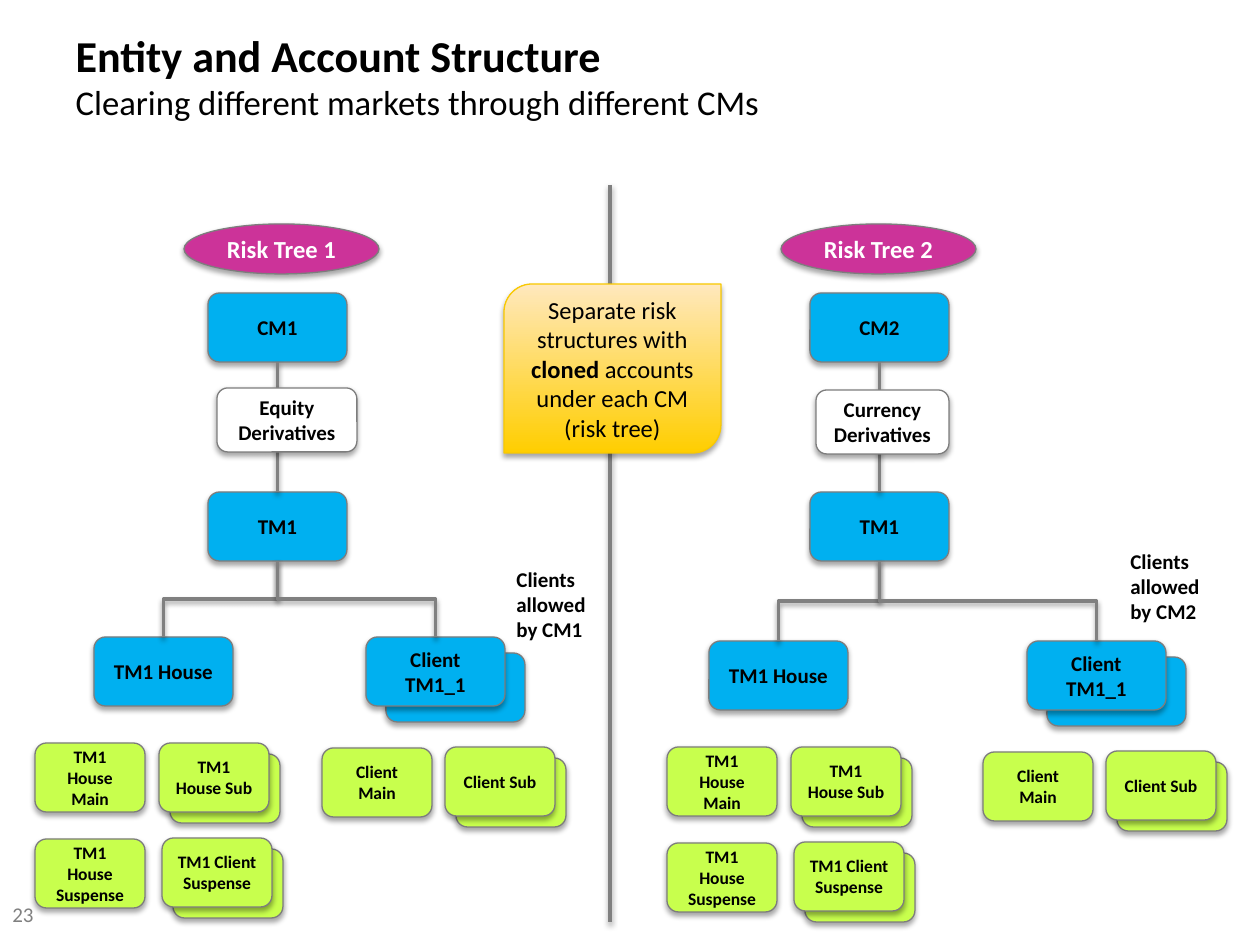
from lxml import etree
from pptx import Presentation
from pptx.dml.color import RGBColor
from pptx.enum.shapes import MSO_CONNECTOR, MSO_SHAPE
from pptx.enum.text import MSO_ANCHOR, MSO_AUTO_SIZE, PP_ALIGN
from pptx.oxml.ns import qn
from pptx.util import Pt

PX = 914400 // 126
ROUNDED, OVAL = MSO_SHAPE.ROUNDED_RECTANGLE, MSO_SHAPE.OVAL
NOTE_SHAPE = MSO_SHAPE.ROUND_2_DIAG_RECTANGLE
STRAIGHT, ELBOW = MSO_CONNECTOR.STRAIGHT, MSO_CONNECTOR.ELBOW
LEFT, CENTER = PP_ALIGN.LEFT, PP_ALIGN.CENTER
TOP, MIDDLE = MSO_ANCHOR.TOP, MSO_ANCHOR.MIDDLE
TOP_SIDE, BOTTOM_SIDE = 0, 2


class Theme:
    font = "Calibri"
    black, white, gray = "000000", "FFFFFF", "808080"
    outline, entity, account, risk = "7D7D7D", "00B0F0", "C8FF4D", "CC3399"
    note_bottom, note_top, note_line = "FFCE00", "FFE8BD", "F9C900"
    title, subtitle, heading, body, small = 25.2, 19.8, 14, 12, 10
    thin, thick = 0.75, 2


TITLE = [[("Entity and Account Structure", {"bold": True}), ("\n", {}),
          ("Clearing different markets through different CMs", {"size": Theme.subtitle})]]
NOTE = [[("Separate risk structures with ", {}), ("cloned", {"bold": True}),
         (" accounts under each CM (risk tree)", {})]]

ENTITY_SIZE, ACCOUNT_SIZE = (139, 69), (110, 69)
ENTITY_STACK, ACCOUNT_STACK = (20, 16), (11, 11)

# Accounts: text, left, top, stacked; places are those of the first tree
HOUSE_ACCOUNTS = [
    ("TM1 House Main", 35, 743, False),
    ("TM1 House Sub", 159, 743, True),
    ("TM1 House Suspense", 35, 839, False),
    ("TM1 Client Suspense", 162, 838, True),
]
CLIENT_ACCOUNTS = [
    ("Client Main", 322, 748, False),
    ("Client Sub", 445, 747, True),
]
# Shifts move each group of the first tree to its place in this tree
TREES = [
    {"name": "Risk Tree 1", "member": "CM1", "market": ["Equity Derivatives"],
     "market_box": (217, 388, 140, 64), "clients": "Clients allowed by CM1",
     "clients_box": (504, 560, 106, 90), "name_left": 184, "trunk_left": 208,
     "house_shift": (0, 0), "house_accounts_shift": (0, 0), "client_shift": (0, 0)},
    {"name": "Risk Tree 2", "member": "CM2", "market": ["Currency", "Derivatives"],
     "market_box": (816, 390, 133, 64), "clients": "Clients allowed by CM2",
     "clients_box": (1118, 542, 110, 90), "name_left": 781, "trunk_left": 810,
     "house_shift": (615, 4), "house_accounts_shift": (632, 4), "client_shift": (661, 4)},
]


def color(code):
    return RGBColor.from_string(code)


def emu(box):
    return [value * PX for value in box]


def write(shape, paragraphs, size=Theme.body, bold=False, ink=Theme.black,
          align=CENTER, anchor=MIDDLE):
    """Fill a shape; a paragraph is a string or a list of (text, overrides) runs."""
    frame = shape.text_frame
    frame.word_wrap = True
    frame.auto_size = MSO_AUTO_SIZE.NONE
    frame.vertical_anchor = anchor
    for index, content in enumerate(paragraphs):
        paragraph = frame.add_paragraph() if index else frame.paragraphs[0]
        paragraph.alignment = align
        runs = [(content, {})] if isinstance(content, str) else content
        for text, overrides in runs:
            if text == "\n":
                paragraph.add_line_break()
                continue
            run = paragraph.add_run()
            run.text = text
            run.font.name = Theme.font
            run.font.size = Pt(overrides.get("size", size))
            run.font.bold = overrides.get("bold", bold)
            run.font.color.rgb = color(ink)


def add_shadow(shape, opacity):
    properties = shape._element.spPr
    effects = properties.find(qn("a:effectLst"))
    if effects is None:
        effects = etree.SubElement(properties, qn("a:effectLst"))
    shadow = etree.SubElement(effects, qn("a:outerShdw"), blurRad="39400", dist="22900",
                              dir="5400000", rotWithShape="0")
    ink = etree.SubElement(shadow, qn("a:srgbClr"), val=Theme.black)
    etree.SubElement(ink, qn("a:alpha"), val=str(opacity * 1000))


def add_box(slide, kind, box, fill, line=Theme.outline):
    shape = slide.shapes.add_shape(kind, *emu(box))
    if isinstance(fill, tuple):
        shape.fill.gradient()
        shape.fill.gradient_angle = 90
        for stop, code in zip(shape.fill.gradient_stops, fill):
            stop.color.rgb = color(code)
    else:
        shape.fill.solid()
        shape.fill.fore_color.rgb = color(fill)
    shape.line.color.rgb = color(line)
    shape.line.width = Pt(Theme.thin)
    shape.shadow.inherit = False
    add_shadow(shape, 35)
    return shape


def add_label(slide, box, text, **style):
    write(slide.shapes.add_textbox(*emu(box)), [text], align=LEFT, anchor=TOP, **style)


def add_line(slide, kind, ends=(0, 0, 0, 0)):
    connector = slide.shapes.add_connector(kind, *emu(ends))
    connector.line.color.rgb = color(Theme.gray)
    connector.line.width = Pt(Theme.thick)
    add_shadow(connector, 38)
    return connector


def join(slide, kind, parent, child):
    connector = add_line(slide, kind)
    connector.begin_connect(parent, BOTTOM_SIDE)
    connector.end_connect(child, TOP_SIDE)
    return connector


def branch(slide, parent, child):
    """Join by an elbow that leaves downwards, which takes a quarter turn."""
    connector = join(slide, ELBOW, parent, child)
    start_x, end_x = connector.begin_x, connector.end_x
    start_y, end_y = connector.begin_y, connector.end_y
    across, down = abs(end_x - start_x), end_y - start_y
    transform = connector._element.spPr.find(qn("a:xfrm"))
    transform.attrib.clear()
    if end_x < start_x:
        transform.set("rot", "5400000")
    else:
        transform.set("rot", "16200000")
        transform.set("flipH", "1")
    connector.left = (start_x + end_x - down) // 2
    connector.top = (start_y + end_y - across) // 2
    connector.width, connector.height = down, across


def add_card(slide, text, left, top, size, fill, type_size, stack=None):
    if stack:
        add_box(slide, ROUNDED, (left + stack[0], top + stack[1], *size), fill)
    card = add_box(slide, ROUNDED, (left, top, *size), fill)
    write(card, [text], size=type_size, bold=True)
    return card


def add_entity(slide, text, left, top, stack=None):
    return add_card(slide, text, left, top, ENTITY_SIZE, Theme.entity, Theme.body, stack)


def add_accounts(slide, accounts, shift):
    for text, left, top, stacked in accounts:
        add_card(slide, text, left + shift[0], top + shift[1], ACCOUNT_SIZE, Theme.account,
                 Theme.small, ACCOUNT_STACK if stacked else None)


def add_tree(slide, tree):
    name = add_box(slide, OVAL, (tree["name_left"], 224, 195, 50), Theme.risk)
    write(name, [tree["name"]], size=Theme.heading, bold=True, ink=Theme.white)

    house_x, house_y = tree["house_shift"]
    client_x, client_y = tree["client_shift"]
    member = add_entity(slide, tree["member"], tree["trunk_left"], 293)
    trader = add_entity(slide, "TM1", tree["trunk_left"], 492)
    house = add_entity(slide, "TM1 House", 94 + house_x, 637 + house_y)
    client = add_entity(slide, "Client TM1_1", 366 + client_x, 637 + client_y, ENTITY_STACK)
    join(slide, STRAIGHT, member, trader)
    branch(slide, trader, house)
    branch(slide, trader, client)

    add_accounts(slide, HOUSE_ACCOUNTS, tree["house_accounts_shift"])
    add_accounts(slide, CLIENT_ACCOUNTS, tree["client_shift"])
    market = add_box(slide, ROUNDED, tree["market_box"], Theme.white)
    write(market, tree["market"], bold=True)
    add_label(slide, tree["clients_box"], tree["clients"], bold=True)


def main():
    presentation = Presentation()
    presentation.slide_width, presentation.slide_height = emu((1260, 945))
    slide = presentation.slides.add_slide(presentation.slide_layouts[5])

    title = slide.shapes.title
    title.left, title.top, title.width, title.height = emu((63, 25, 847, 101))
    write(title, TITLE, size=Theme.title, align=LEFT)
    add_label(slide, (0, 895, 74, 50), "23", ink=Theme.gray)

    for tree in TREES:
        add_tree(slide, tree)

    add_line(slide, STRAIGHT, (610, 185, 610, 922))
    note = add_box(slide, NOTE_SHAPE, (504, 284, 217, 169),
                   (Theme.note_bottom, Theme.note_top), Theme.note_line)
    write(note, NOTE, size=Theme.heading)
    presentation.save("out.pptx")


if __name__ == "__main__":
    main()
